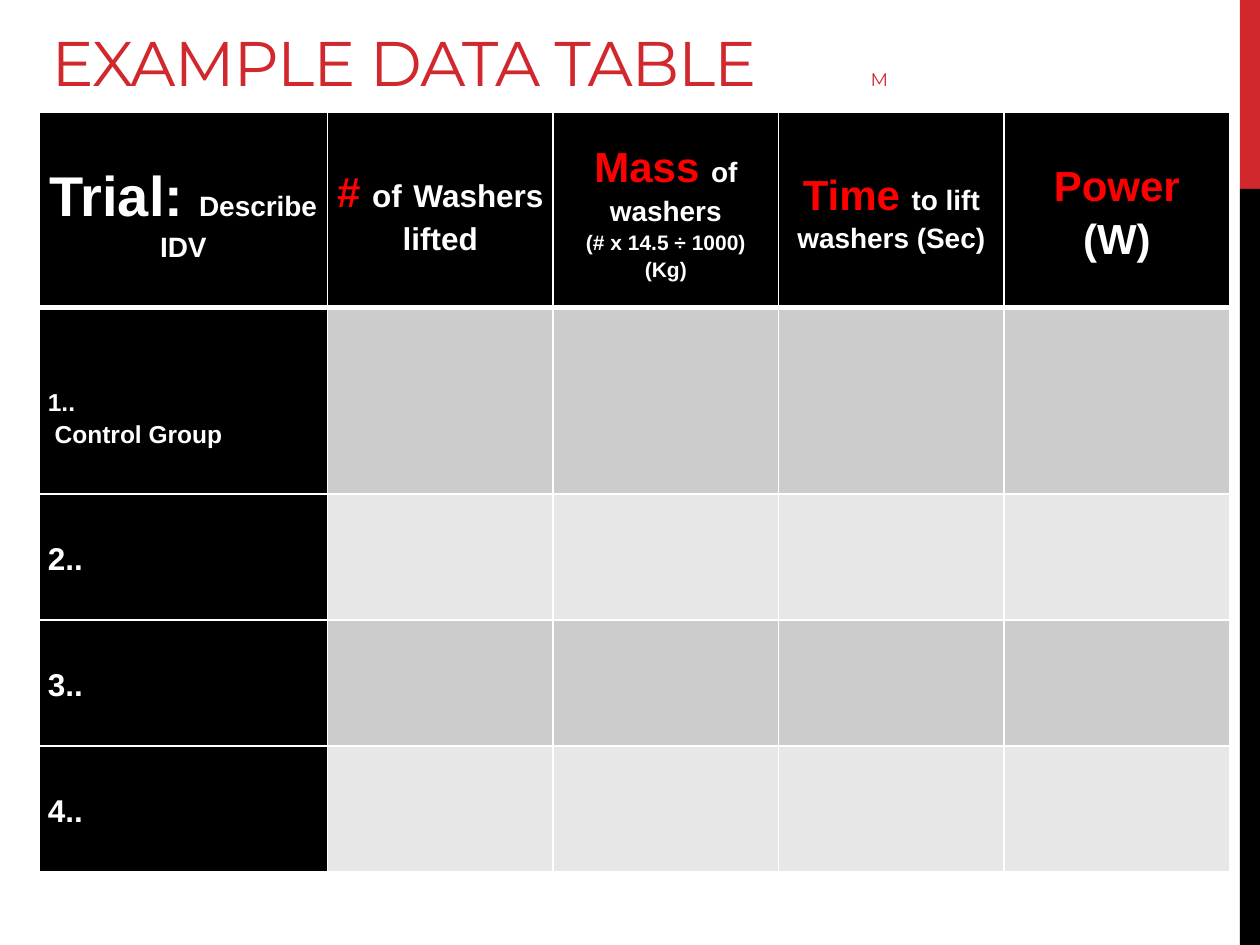
from dataclasses import dataclass

from lxml.etree import SubElement
from pptx import Presentation
from pptx.dml.color import RGBColor
from pptx.enum.shapes import MSO_SHAPE
from pptx.enum.text import MSO_ANCHOR, MSO_AUTO_SIZE, PP_ALIGN
from pptx.oxml.ns import qn
from pptx.util import Inches, Pt

CRIMSON = RGBColor(0xD1, 0x28, 0x2E)
RED = RGBColor(0xFF, 0x00, 0x00)
BLACK = RGBColor(0x00, 0x00, 0x00)
WHITE = RGBColor(0xFF, 0xFF, 0xFF)
DARK_BAND = RGBColor(0xCC, 0xCC, 0xCC)
LIGHT_BAND = RGBColor(0xE7, 0xE7, 0xE7)


@dataclass(frozen=True)
class Phrase:
    text: str
    size: float
    color: RGBColor = WHITE
    font: str = "Arial"
    bold: bool = True


@dataclass(frozen=True)
class SideBar:
    top: float
    height: float
    color: RGBColor


SIDE_BARS = [SideBar(0, 1.5, CRIMSON), SideBar(1.5, 6, BLACK)]
TITLE = [
    Phrase("EXAMPLE DATA TABLE\t\t", 36, CRIMSON, "Montserrat", False),
    Phrase("M", 10.5, CRIMSON, "Montserrat", False),
]
HEADERS = [
    [[Phrase("Trial: ", 32), Phrase("Describe IDV", 16)]],
    [[Phrase("# ", 24, RED), Phrase("of", 18), Phrase(" ", 24),
      Phrase("Washers lifted", 18)]],
    [[Phrase("Mass ", 24, RED), Phrase("of washers", 16)],
     [Phrase("(# x 14.5 ÷ 1000)", 12)],
     [Phrase("(Kg)", 12)]],
    [[Phrase("Time ", 24, RED), Phrase("to lift washers (Sec)", 16)]],
    [[Phrase("Power", 24, RED)], [Phrase("(W)", 24)]],
]
TRIALS = [
    [[Phrase("1..", 14)], [Phrase(" Control Group", 14)]],
    [[Phrase("2..", 18)]],
    [[Phrase("3..", 18)]],
    [[Phrase("4..", 18)]],
]
COLUMN_WIDTHS = [2.29] + [1.79] * 4
ROW_HEIGHTS = [1.55, 1.48, 1, 1, 1]


def add_phrases(paragraph, phrases: list[Phrase]) -> None:
    for phrase in phrases:
        run = paragraph.add_run()
        run.text = phrase.text
        run.font.size = Pt(phrase.size)
        run.font.name = phrase.font
        run.font.bold = phrase.bold
        run.font.color.rgb = phrase.color


def add_side_bar(slide, bar: SideBar) -> None:
    stripe = slide.shapes.add_shape(
        MSO_SHAPE.RECTANGLE, Inches(9.84), Inches(bar.top), Inches(0.16), Inches(bar.height)
    )
    stripe.shadow.inherit = False
    stripe.fill.solid()
    stripe.fill.fore_color.rgb = bar.color
    stripe.line.fill.background()


def add_title(slide) -> None:
    title = slide.shapes.title
    title.left, title.top = Inches(0.31), Inches(0)
    title.width, title.height = Inches(9.16), Inches(0.84)
    frame = title.text_frame
    frame.word_wrap = True
    frame.auto_size = MSO_AUTO_SIZE.NONE
    frame.vertical_anchor = MSO_ANCHOR.BOTTOM
    heading = frame.paragraphs[0]
    heading.alignment = PP_ALIGN.LEFT
    add_phrases(heading, TITLE)
    for run in heading.runs:
        run.font._element.set("spc", "-60")


def style_cell(cell, color: RGBColor, bottom_border: float) -> None:
    properties = cell._tc.get_or_add_tcPr()
    borders = {"a:lnL": 1, "a:lnR": 1, "a:lnT": 1, "a:lnB": bottom_border}
    for tag, width in borders.items():
        border = SubElement(properties, qn(tag), w=str(Pt(width)))
        solid = SubElement(border, qn("a:solidFill"))
        SubElement(solid, qn("a:srgbClr"), val=str(WHITE))
    cell.fill.solid()
    cell.fill.fore_color.rgb = color


def write_cell(cell, lines: list[list[Phrase]], alignment: PP_ALIGN) -> None:
    cell.vertical_anchor = MSO_ANCHOR.MIDDLE
    cell.margin_left = cell.margin_right = Inches(0.07)
    cell.margin_top = cell.margin_bottom = Inches(0)
    frame = cell.text_frame
    for index, phrases in enumerate(lines):
        paragraph = frame.add_paragraph() if index else frame.paragraphs[0]
        paragraph.alignment = alignment
        paragraph.line_spacing = 1.15
        add_phrases(paragraph, phrases)


def add_data_table(slide) -> None:
    table = slide.shapes.add_table(
        len(ROW_HEIGHTS), len(COLUMN_WIDTHS), Inches(0.31), Inches(0.89),
        Inches(sum(COLUMN_WIDTHS)), Inches(sum(ROW_HEIGHTS))
    ).table
    for column, width in zip(table.columns, COLUMN_WIDTHS):
        column.width = Inches(width)
    for row, height in zip(table.rows, ROW_HEIGHTS):
        row.height = Inches(height)

    for row_index, row in enumerate(table.rows):
        band = DARK_BAND if row_index % 2 else LIGHT_BAND
        for column_index, cell in enumerate(row.cells):
            is_label = row_index == 0 or column_index == 0
            style_cell(cell, BLACK if is_label else band, 1 if row_index else 3)

    for column_index, lines in enumerate(HEADERS):
        write_cell(table.cell(0, column_index), lines, PP_ALIGN.CENTER)
    for row_index, lines in enumerate(TRIALS, start=1):
        write_cell(table.cell(row_index, 0), lines, PP_ALIGN.LEFT)
    table.cell(1, 0).margin_top = Inches(0.26)


def main() -> None:
    presentation = Presentation()
    presentation.slide_width = Inches(10)
    presentation.slide_height = Inches(7.5)
    slide = presentation.slides.add_slide(presentation.slide_layouts[5])
    slide.background.fill.solid()
    slide.background.fill.fore_color.rgb = WHITE
    for bar in SIDE_BARS:
        add_side_bar(slide, bar)
    add_title(slide)
    add_data_table(slide)
    presentation.save("out.pptx")


if __name__ == "__main__":
    main()
